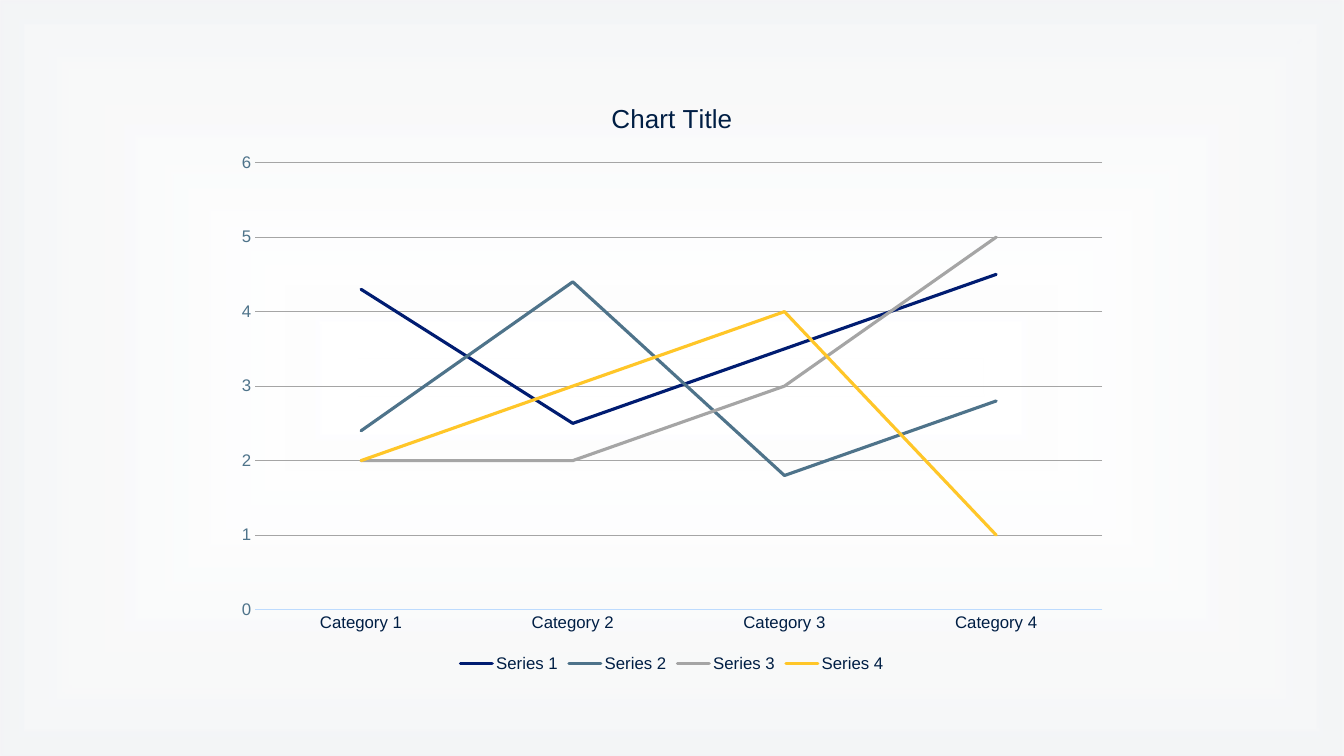
from lxml import etree
from pptx import Presentation
from pptx import util as u
from pptx.chart.data import CategoryChartData
from pptx.dml.color import RGBColor
from pptx.enum import chart as ch
from pptx.enum import shapes
from pptx.oxml.ns import qn

WIDTH, HEIGHT = u.Inches(13.33), u.Inches(7.5)

WHITE = RGBColor(0xFF, 0xFF, 0xFF)
INK = RGBColor(0x01, 0x1E, 0x41)
NAVY_TEXT = RGBColor(0x00, 0x1E, 0x44)
NAVY = RGBColor(0x00, 0x1C, 0x71)
STEEL = RGBColor(0x4E, 0x73, 0x8A)
GREY = RGBColor(0xA5, 0xA5, 0xA5)
GOLD = RGBColor(0xFF, 0xC6, 0x28)
PALE_BLUE = RGBColor(0xBD, 0xDB, 0xFE)

CATEGORIES = [f"Category {n}" for n in range(1, 5)]
SERIES = [
    ("Series 1", NAVY, (4.3, 2.5, 3.5, 4.5)),
    ("Series 2", STEEL, (2.4, 4.4, 1.8, 2.8)),
    ("Series 3", GREY, (2, 2, 3, 5)),
    ("Series 4", GOLD, (2, 3, 4, 1)),
]


def set_all(target, values):
    for name, value in values.items():
        setattr(target, name, value)


def set_font(font, size, color, name="Arial"):
    set_all(font, {"size": u.Pt(size), "name": name, "bold": False})
    font.color.rgb = color


def set_line(line, color, width):
    line.color.rgb = color
    line.width = u.Pt(width)


def add_vignette(s):
    """Full-slide rectangle that darkens slightly towards the edges."""
    sp = s.shapes.add_shape(shapes.MSO_SHAPE.RECTANGLE, 0, 0, WIDTH, HEIGHT)
    sp.shadow.inherit = False
    sp.line.fill.background()
    sp.fill.gradient()
    grad = sp.fill._xPr.find(qn("a:gradFill"))
    for child in list(grad):
        grad.remove(child)
    stops = etree.SubElement(grad, qn("a:gsLst"))
    for pos, color, alpha in ((0, WHITE, 0), (100, INK, 4)):
        stop = etree.SubElement(stops, qn("a:gs"), pos=str(pos * 1000))
        rgb = etree.SubElement(stop, qn("a:srgbClr"), val=str(color))
        etree.SubElement(rgb, qn("a:alpha"), val=str(alpha * 1000))
    shade = etree.SubElement(grad, qn("a:path"), path="rect")
    etree.SubElement(shade, qn("a:fillToRect"),
                     {side: "50000" for side in "ltrb"})


def add_line_chart(s):
    data = CategoryChartData()
    data.categories = CATEGORIES
    for name, _, values in SERIES:
        data.add_series(name, values)
    # Two thirds of the slide's width, centred
    frame = s.shapes.add_chart(
        ch.XL_CHART_TYPE.LINE, WIDTH // 6, int(HEIGHT * 0.105),
        WIDTH * 2 // 3, int(HEIGHT * 0.79), data)
    chart = frame.chart
    set_font(chart.font, 10, INK, "Times New Roman")
    return chart


def format_title(chart, title):
    chart.has_title = True
    tf = chart.chart_title.text_frame
    tf.text = title
    set_font(tf.paragraphs[0].runs[0].font, 18.6, NAVY_TEXT)
    chart.chart_title.include_in_layout = False


def format_axes(chart):
    for axis, color in ((chart.category_axis, NAVY_TEXT),
                        (chart.value_axis, STEEL)):
        set_all(axis, {"major_tick_mark": ch.XL_TICK_MARK.NONE,
                       "minor_tick_mark": ch.XL_TICK_MARK.NONE})
        set_font(axis.tick_labels.font, 12, color)
    set_line(chart.category_axis.format.line, PALE_BLUE, 0.75)
    values = chart.value_axis
    set_all(values, {"minimum_scale": 0, "maximum_scale": 6, "major_unit": 1,
                     "has_major_gridlines": True})
    values.format.line.fill.background()
    set_line(values.major_gridlines.format.line, GREY, 0.75)


def format_legend(chart):
    chart.has_legend = True
    set_all(chart.legend, {"position": ch.XL_LEGEND_POSITION.BOTTOM,
                           "include_in_layout": False})
    set_font(chart.legend.font, 12, NAVY_TEXT)


def format_series(chart):
    plot = chart.plots[0]
    plot.vary_by_categories = False
    for series, (_, color, _) in zip(plot.series, SERIES):
        series.smooth = False
        series.marker.style = ch.XL_MARKER_STYLE.NONE
        set_line(series.format.line, color, 2.25)
        series.format.line._get_or_add_ln().set("cap", "rnd")


def main():
    prs = Presentation()
    set_all(prs, {"slide_width": WIDTH, "slide_height": HEIGHT})
    s = prs.slides.add_slide(prs.slide_layouts.get_by_name("Blank"))

    # Background
    add_vignette(s)

    # Chart
    chart = add_line_chart(s)
    format_title(chart, "Chart Title")
    format_axes(chart)
    format_legend(chart)
    format_series(chart)

    prs.save("out.pptx")


if __name__ == "__main__":
    main()
